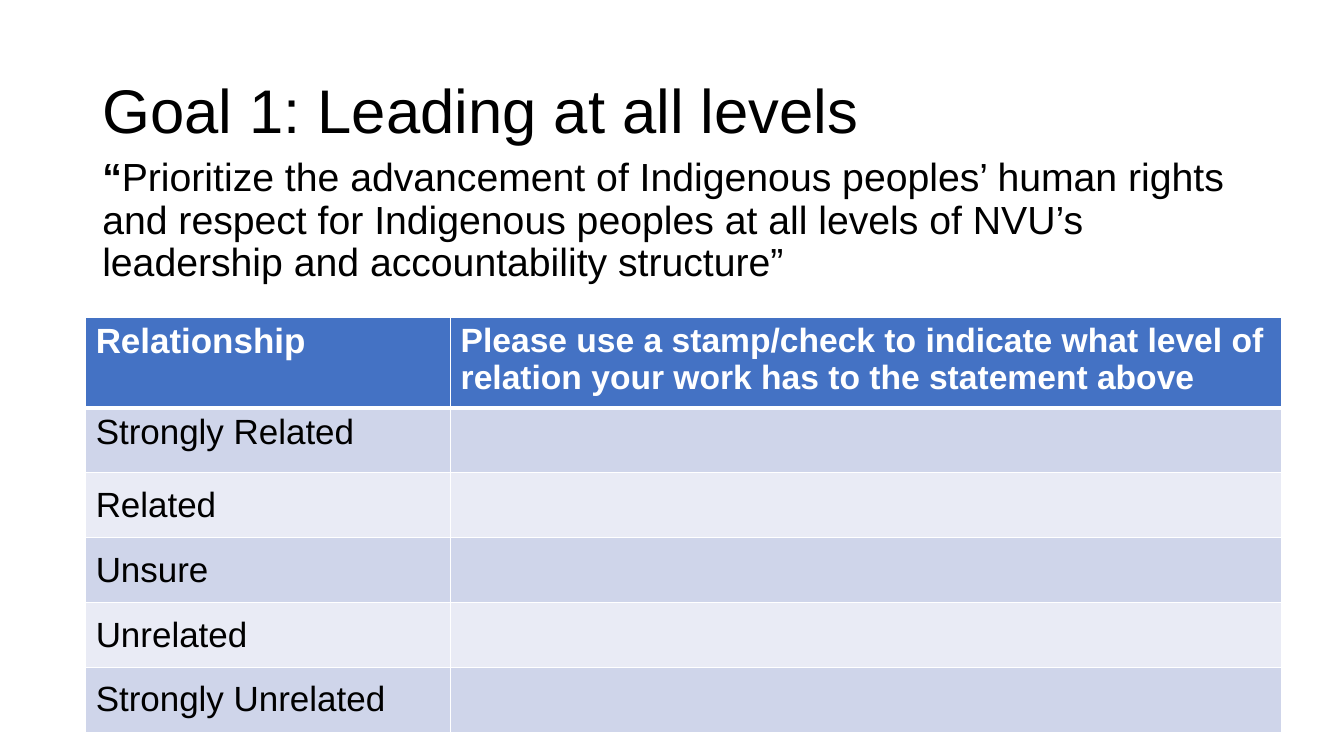
import pptx
import pptx.dml.color
import pptx.enum.text
import pptx.util
from lxml import etree
from pptx.oxml.ns import qn

Pt = pptx.util.Pt
ANCHOR = pptx.enum.text.MSO_ANCHOR
BLACK, WHITE, BLUE = "000000", "FFFFFF", "4472C4"
BANDS = ("CFD5EA", "E9EBF5")
HEADERS = (
    ("Relationship", 25),
    ("Please use a stamp/check to indicate what level of relation "
     "your work has to the statement above", 24),
)
LEVELS = ("Strongly Related", "Related", "Unsure", "Unrelated", "Strongly Unrelated")


def color(value):
    return pptx.dml.color.RGBColor.from_string(value)


def style_font(font, size, fill, bold=None):
    font.name = "Arial"
    font.size = Pt(size)
    font.color.rgb = color(fill)
    font.bold = bold


def add_text(s, box, runs, size, anchor, space_before=0):
    tf = s.shapes.add_textbox(*map(Pt, box)).text_frame
    tf.word_wrap = True
    tf.vertical_anchor = anchor
    p = tf.paragraphs[0]
    p.line_spacing = 0.9
    p.space_before = Pt(space_before)
    style_font(p.font, size, BLACK)
    for text, bold in runs:
        r = p.add_run()
        r.text = text
        style_font(r.font, size, BLACK, bold)


def set_borders(cell, widths):
    tc_pr = cell._tc.get_or_add_tcPr()
    for side, width in zip("LRTB", widths):
        line = etree.SubElement(tc_pr, qn(f"a:ln{side}"), w=str(Pt(width)))
        fill = etree.SubElement(line, qn("a:solidFill"))
        etree.SubElement(fill, qn("a:srgbClr"), val=WHITE)


def fill_cell(cell, fill, widths):
    set_borders(cell, widths)
    cell.fill.solid()
    cell.fill.fore_color.rgb = color(fill)


def write_cell(cell, text, size, text_color, bold, anchor):
    cell.vertical_anchor = anchor
    p = cell.text_frame.paragraphs[0]
    r = p.add_run()
    r.text = text
    style_font(r.font, size, text_color, bold)


def add_rating_table(s):
    frame = s.shapes.add_table(len(LEVELS) + 1, 2, Pt(61.2), Pt(226.4), Pt(854), Pt(296.6))
    table = frame.table
    for column, width in zip(table.columns, (260.7, 593.3)):
        column.width = Pt(width)
    for i, row in enumerate(table.rows):
        row.height = Pt(46.4 if i else 56.2)
        fill = BANDS[(i - 1) % 2] if i else BLUE
        widths = (1, 1, 3 if i == 1 else 1, 1 if i else 3)
        for cell in row.cells:
            fill_cell(cell, fill, widths)
    for j, (text, size) in enumerate(HEADERS):
        write_cell(table.cell(0, j), text, size, WHITE, True, ANCHOR.TOP)
    for i, text in enumerate(LEVELS, 1):
        anchor = ANCHOR.TOP if i == 1 else ANCHOR.MIDDLE
        write_cell(table.cell(i, 0), text, 25, BLACK, False, anchor)


def main():
    prs = pptx.Presentation()
    prs.slide_width, prs.slide_height = Pt(960), Pt(540)
    s = prs.slides.add_slide(prs.slide_layouts[6])
    add_text(s, (66, 28.8, 828, 104.4), [("Goal 1: Leading at all levels", None)],
             44, ANCHOR.MIDDLE)
    quote = [
        ("“", True),
        ("Prioritize the advancement of Indigenous peoples’ human rights and respect "
         "for Indigenous peoples at all levels of NVU’s leadership and accountability "
         "structure”", False),
    ]
    add_text(s, (66, 109.4, 828, 342.7), quote, 28, ANCHOR.TOP, 10)
    add_rating_table(s)
    prs.save("out.pptx")


if __name__ == "__main__":
    main()
